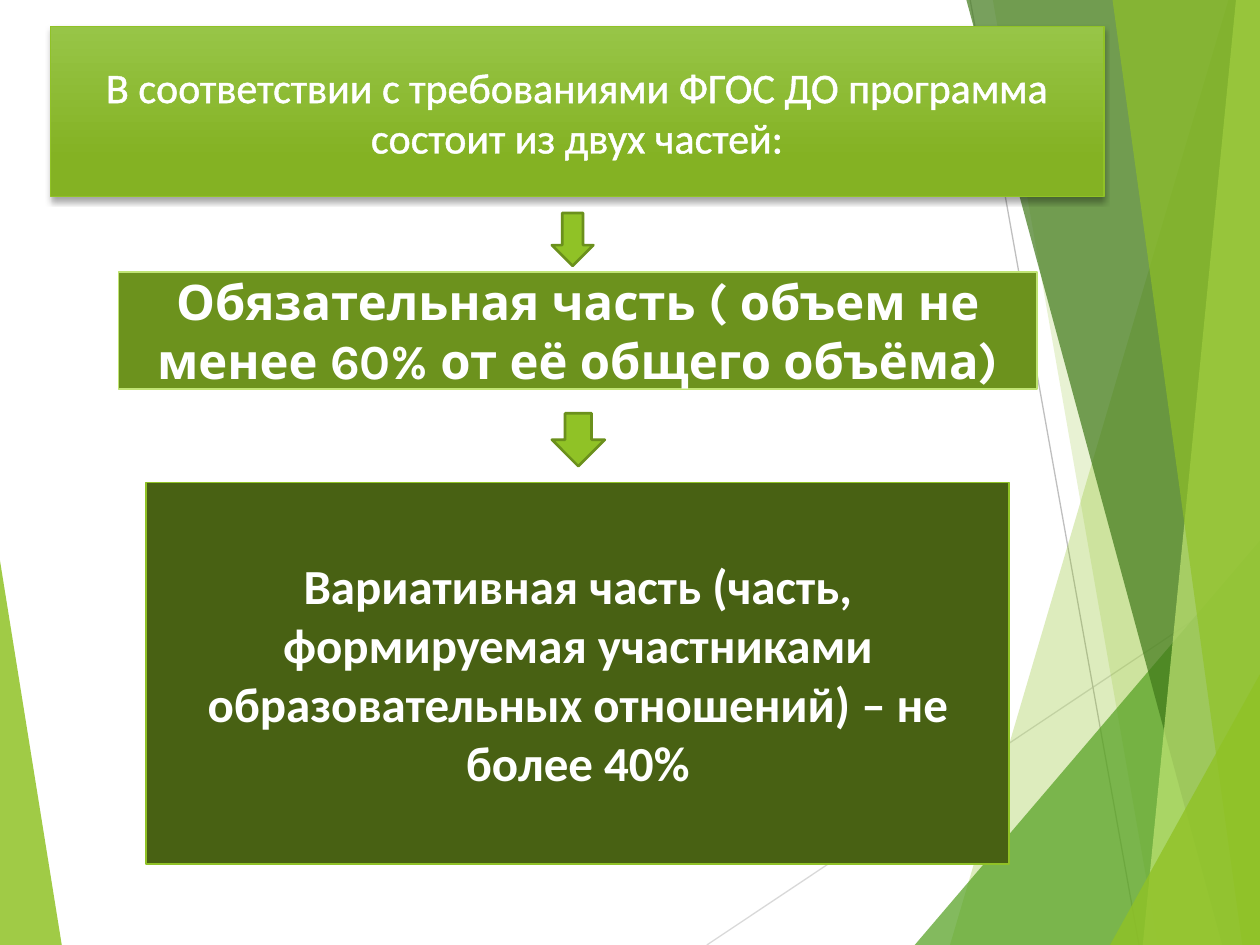
import pptx
import pptx.util
from lxml import etree
from pptx.dml.color import RGBColor
from pptx.enum.shapes import MSO_CONNECTOR, MSO_SHAPE
from pptx.enum.text import MSO_ANCHOR, MSO_AUTO_SIZE, PP_ALIGN
from pptx.oxml import parse_xml
from pptx.oxml.ns import qn
from pptx.util import Inches, Pt

WIDTH, HEIGHT = 10, 7.5
NAMESPACE = 'xmlns:a="http://schemas.openxmlformats.org/drawingml/2006/main"'

TITLE = "В соответствии с требованиями ФГОС ДО программа состоит из двух частей:"
TITLE_BOX = (0.4, 0.21, 8.36, 1.35)
TITLE_GRADIENT = [(0, "97C547"), (0.78, "84B223")]

# text, box, fill, line, font
PARTS = [
    ("Обязательная часть ( объем не менее 60% от её общего объёма)",
     (0.94, 2.16, 7.29, 0.93), "6C921D", "C0E474", "Karla"),
    ("Вариативная часть (часть, формируемая участниками образовательных "
     "отношений) – не более 40%",
     (1.16, 3.83, 6.85, 3.03), "486113", "90C226", "Calibri"),
]
ARROWS = [(4.38, 1.69, 0.33, 0.42), (4.38, 3.28, 0.42, 0.42)]

# start, end, colour
RAYS = [((5.61, HEIGHT), (WIDTH, 4.57), "D9D9D9"),
        ((7.7, 0), (9.04, HEIGHT), "BFBFBF")]

# corners, colour, opacity in percent
LEFT_FACET = ([(0, 4.45), (0.49, HEIGHT), (0, HEIGHT)], "90C226", 85)


def right_band(top, bottom):
    """Corners of a band that reaches from a slanted edge to the right side."""
    return [(top, 0), (bottom, HEIGHT), (WIDTH, HEIGHT), (WIDTH, 0)]


def right_corner(left, top):
    """Corners of a triangle in the bottom right corner."""
    return [(left, HEIGHT), (WIDTH, top), (WIDTH, HEIGHT)]


RIGHT_FACETS = [
    (right_band(9.75, 7.54), "90C226", 30),
    (right_band(7.88, 9.19), "90C226", 20),
    (right_corner(7.26, 4.29), "54A021", 72),
    (right_band(7.67, 9.7), "3F7819", 70),
    (right_band(9.81, 9.07), "C0E474", 70),
    (right_band(8.83, 9.86), "90C226", 65),
    (right_corner(8.81, 5.35), "90C226", 80),
]


def rgb(colour):
    return RGBColor.from_string(colour)


def paint(shape, fill, line=None, width=1):
    shape.shadow.inherit = False
    shape.fill.solid()
    shape.fill.fore_color.rgb = rgb(fill)
    if line:
        shape.line.color.rgb = rgb(line)
        shape.line.width = Pt(width)
    else:
        shape.line.fill.background()


def write(shape, text, font="Calibri", size=28, bold=True, colour="FFFFFF"):
    frame = shape.text_frame
    frame.word_wrap = True
    frame.auto_size = MSO_AUTO_SIZE.NONE
    frame.vertical_anchor = MSO_ANCHOR.MIDDLE
    paragraph = frame.paragraphs[0]
    paragraph.alignment = PP_ALIGN.CENTER
    run = paragraph.add_run()
    run.text = text
    run.font.name = font
    run.font.size = Pt(size)
    run.font.bold = bold
    run.font.color.rgb = rgb(colour)
    return run


def add_facet(shapes, corners, colour, opacity):
    first, *others = [(Inches(x), Inches(y)) for x, y in corners]
    builder = shapes.build_freeform(*first)
    builder.add_line_segments(others, close=True)
    facet = builder.convert_to_shape()
    paint(facet, colour)
    solid = facet.fill._xPr.find(qn("a:solidFill"))
    etree.SubElement(solid[0], qn("a:alpha"), val=str(opacity * 1000))


def add_ray(shapes, start, end, colour):
    ray = shapes.add_connector(MSO_CONNECTOR.STRAIGHT,
                               *[Inches(value) for value in start + end])
    ray.line.color.rgb = rgb(colour)
    ray.line.width = Pt(0.75)
    etree.SubElement(ray._element.spPr, qn("a:effectLst"))


def add_box(shapes, kind, box):
    return shapes.add_shape(kind, *[Inches(value) for value in box])


def format_title(title):
    title.left, title.top, title.width, title.height = map(Inches, TITLE_BOX)
    title.fill.gradient()
    title.fill.gradient_angle = 270
    for stop, (position, colour) in zip(title.fill.gradient_stops, TITLE_GRADIENT):
        stop.position = position
        stop.color.rgb = rgb(colour)
    title.line.color.rgb = rgb("90C226")
    title.line.width = Pt(1)
    title._element.spPr.append(parse_xml(
        f'<a:effectLst {NAMESPACE}><a:outerShdw blurRad="{Pt(3)}" dist="{Pt(2)}" '
        'dir="5400000" rotWithShape="0"><a:srgbClr val="000000">'
        '<a:alpha val="35000"/></a:srgbClr></a:outerShdw></a:effectLst>'))
    run = write(title, TITLE, size=24, bold=False)
    run.font._element.insert(0, parse_xml(
        f'<a:ln {NAMESPACE} w="{Pt(1.45)}"><a:solidFill>'
        '<a:srgbClr val="FFFFFF"/></a:solidFill></a:ln>'))


def main():
    presentation = pptx.Presentation()
    presentation.slide_width = Inches(WIDTH)
    presentation.slide_height = Inches(HEIGHT)
    slide = presentation.slides.add_slide(presentation.slide_layouts[5])
    shapes = slide.shapes

    add_facet(shapes, *LEFT_FACET)
    for ray in RAYS:
        add_ray(shapes, *ray)
    for facet in RIGHT_FACETS:
        add_facet(shapes, *facet)

    title = shapes.title
    format_title(title)
    shapes._spTree.append(title._element)  # in front of the facets

    for text, box, fill, line, font in PARTS:
        part = add_box(shapes, MSO_SHAPE.RECTANGLE, box)
        paint(part, fill, line)
        write(part, text, font=font)
    for box in ARROWS:
        paint(add_box(shapes, MSO_SHAPE.DOWN_ARROW, box), "90C226", "6B901C", 1.5)

    presentation.save("out.pptx")


if __name__ == "__main__":
    main()
